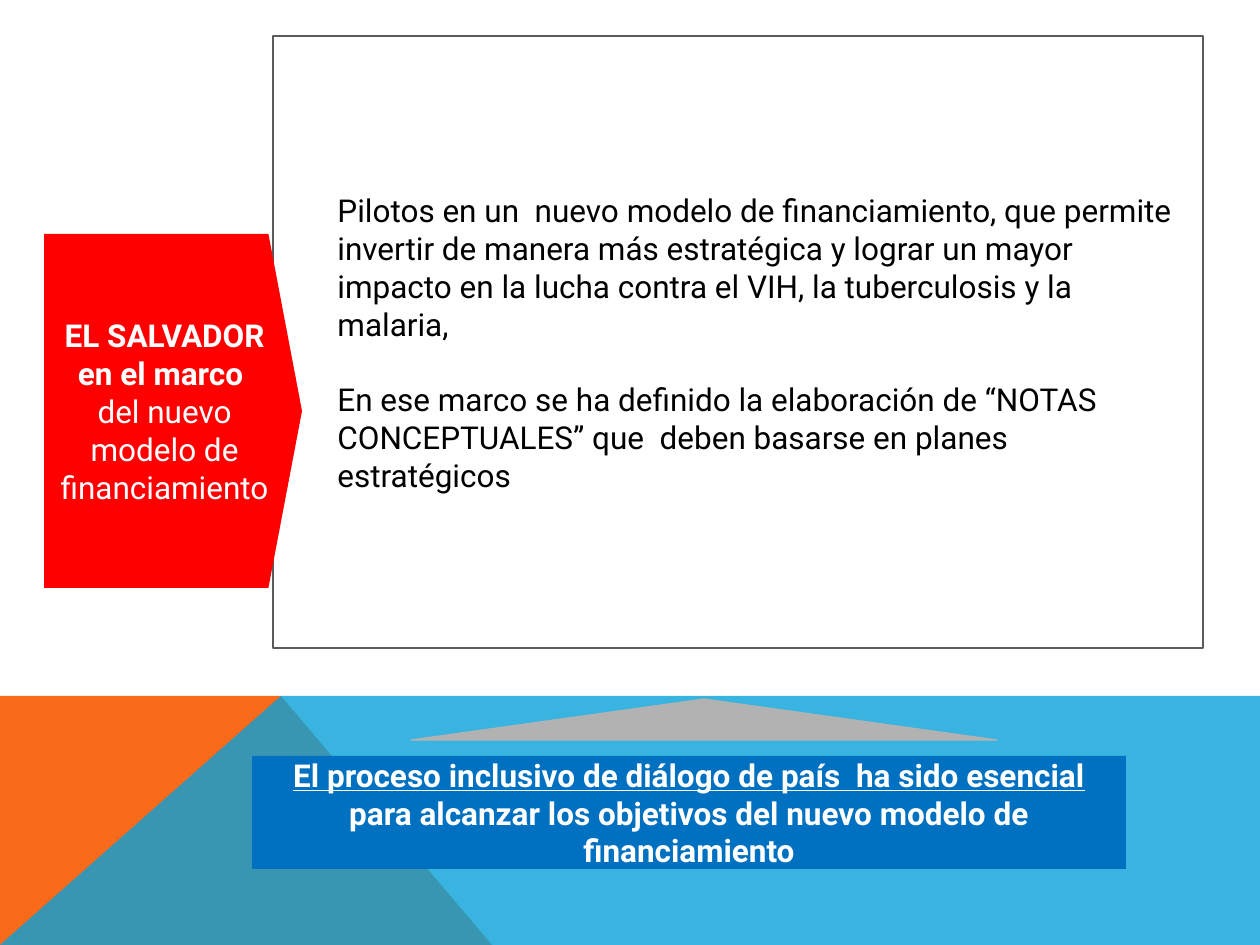
"""Build the slide on El Salvador and the new financing model."""
from dataclasses import dataclass

from lxml.etree import SubElement
from pptx import Presentation
from pptx.dml.color import RGBColor
from pptx.enum.shapes import MSO_SHAPE
from pptx.enum.text import MSO_ANCHOR, PP_ALIGN
from pptx.oxml.ns import qn
from pptx.util import Pt

PX = 914400 / 126


@dataclass(frozen=True)
class Theme:
    font: str = "Roboto"
    size: int = 18
    line_gap: float = 21.6
    orange: str = "F96A1B"
    sky: str = "08A1D9"
    red: str = "FF0000"
    blue: str = "0070C0"
    grey: str = "B2B2B2"
    frame: str = "5A5B5D"
    white: str = "FFFFFF"
    black: str = "000000"


theme = Theme()


def paint(shape, fill=None, line=None, width=1):
    shape.shadow.inherit = False
    if fill:
        shape.fill.solid()
        shape.fill.fore_color.rgb = RGBColor.from_string(fill)
    else:
        shape.fill.background()
    if line:
        shape.line.color.rgb = RGBColor.from_string(line)
        shape.line.width = Pt(width)
    else:
        shape.line.fill.background()


def write(shape, paragraphs, color, align, anchor):
    frame = shape.text_frame
    frame.word_wrap = True
    frame.vertical_anchor = anchor
    for index, (text, style) in enumerate(paragraphs):
        para = frame.paragraphs[0] if index == 0 else frame.add_paragraph()
        para.alignment = align
        span = para.add_run()
        span.text = text
        span.font.color.rgb = RGBColor.from_string(color)
        formats = {"name": theme.font, "size": Pt(theme.size), **style}
        for name, value in formats.items():
            setattr(span.font, name, value)


deck = Presentation()
deck.slide_width = round(1260 * PX)
deck.slide_height = round(945 * PX)
page = deck.slides.add_slide(deck.slide_layouts[6])

bands = [
    (theme.orange, [(0, 945), (0, 696), (281, 696), (492, 945)]),
    (theme.sky, [(0, 945), (281, 696), (1260, 696), (1260, 945)]),
]
for color, points in bands:
    builder = page.shapes.build_freeform(*points[0], scale=PX)
    builder.add_line_segments(points[1:], close=True)
    band = builder.convert_to_shape()
    paint(band, color)
tint = band._element.spPr.find(qn("a:solidFill"))[0]
SubElement(tint, qn("a:alpha"), val="80000")

blocks = {
    "panel": (MSO_SHAPE.RECTANGLE, (273, 36, 930, 612), None, theme.frame, 1),
    "tag": (MSO_SHAPE.PENTAGON, (44, 234, 258, 354), theme.red, None, 0),
    "pointer": (MSO_SHAPE.ISOSCELES_TRIANGLE, (411, 699, 586, 41), theme.grey, theme.grey, 0.75),
    "banner": (MSO_SHAPE.RECTANGLE, (252, 756, 874, 113), theme.blue, None, 0),
}
shapes = {}
for name, (kind, place, fill, line, width) in blocks.items():
    shapes[name] = page.shapes.add_shape(kind, *(round(length * PX) for length in place))
    paint(shapes[name], fill, line, width)
shapes["tag"].adjustments[0] = 0.13

write(shapes["tag"], [
    ("EL SALVADOR en el marco ", {"bold": True}),
    ("del nuevo modelo de financiamiento", {}),
], theme.white, PP_ALIGN.CENTER, MSO_ANCHOR.MIDDLE)

write(shapes["banner"], [
    ("El proceso inclusivo de diálogo de país  ha sido esencial", {"bold": True, "underline": True}),
    ("para alcanzar los objetivos del nuevo modelo de financiamiento", {"bold": True}),
], theme.white, PP_ALIGN.CENTER, MSO_ANCHOR.MIDDLE)

body = page.shapes.add_textbox(*(round(length * PX) for length in (325, 185, 877, 280)))
write(body, [
    ("Pilotos en un  nuevo modelo de financiamiento, que permite invertir de manera más "
     "estratégica y lograr un mayor impacto en la lucha contra el VIH, la tuberculosis y la malaria,", {}),
    ("En ese marco se ha definido la elaboración de “NOTAS CONCEPTUALES” que  deben basarse "
     "en planes estratégicos", {}),
], theme.black, PP_ALIGN.LEFT, MSO_ANCHOR.TOP)
body.text_frame.paragraphs[1].space_before = Pt(theme.line_gap)

deck.save("out.pptx")
